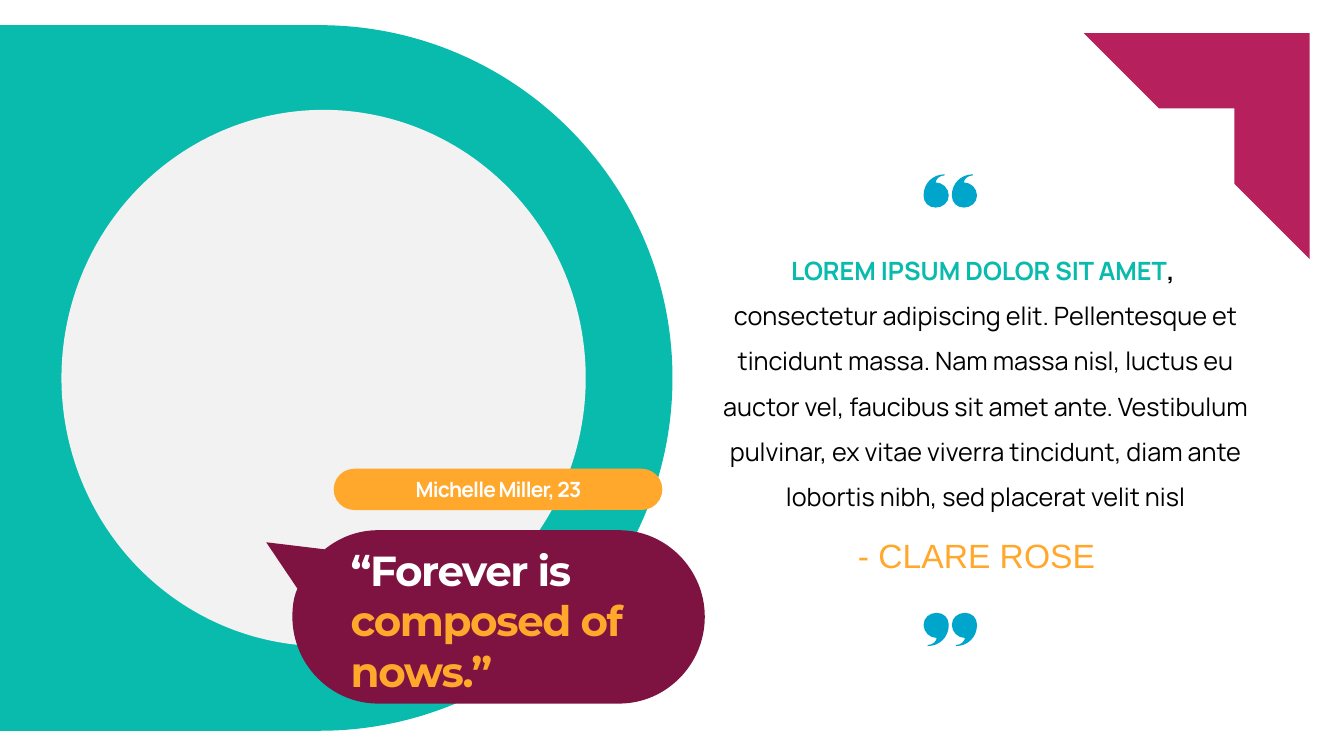
from dataclasses import dataclass

from lxml import etree
from pptx import Presentation
from pptx.dml.color import RGBColor
from pptx.enum.shapes import MSO_SHAPE
from pptx.enum.text import MSO_ANCHOR, MSO_AUTO_SIZE, PP_ALIGN
from pptx.oxml.ns import qn
from pptx.util import Inches, Pt

ROUND_RECT = MSO_SHAPE.ROUNDED_RECTANGLE
OVAL = MSO_SHAPE.OVAL
HALF_FRAME = MSO_SHAPE.HALF_FRAME
LEFT, CENTER = PP_ALIGN.LEFT, PP_ALIGN.CENTER
TOP, MIDDLE = MSO_ANCHOR.TOP, MSO_ANCHOR.MIDDLE
FIT_SHAPE = MSO_AUTO_SIZE.SHAPE_TO_FIT_TEXT


@dataclass(frozen=True)
class Theme:
    teal: str = "08BBAD"
    grey: str = "F2F2F2"
    blue: str = "00A5CC"
    berry: str = "B5205D"
    wine: str = "7E1341"
    orange: str = "FFA82C"
    white: str = "FFFFFF"
    black: str = "000000"
    body_font: str = "Manrope"
    quote_font: str = "Montserrat"
    author_font: str = "Arial"
    label_size: int = 15
    body_size: int = 18
    author_size: int = 24
    quote_size: int = 30


THEME = Theme()

# Outlines in inches: a pair is a corner, six numbers are a cubic curve
PANEL = [
    (3.17, 0.25), (0, 0.25), (0, 7.25), (3.17, 7.25),
    (5.1, 7.25, 6.67, 5.68, 6.67, 3.75), (6.67, 1.82, 5.1, 0.25, 3.17, 0.25),
]
BUBBLE = [
    (6.14, 5.26), (3.75, 5.26), (3.55, 5.26, 3.37, 5.33, 3.22, 5.45),
    (2.64, 5.38), (2.95, 5.84), (2.91, 5.93, 2.9, 6.02, 2.9, 6.12),
    (2.9, 6.59, 3.28, 6.98, 3.75, 6.98), (6.14, 6.98),
    (6.61, 6.98, 6.99, 6.59, 6.99, 6.12), (6.99, 5.65, 6.61, 5.26, 6.14, 5.26),
]
QUOTE_SIZE = (0.25, 0.33)
QUOTE_MARK = [
    (0.12, 0.08), (0.12, 0.05, 0.16, 0.01, 0.21, 0.01), (0.21, 0),
    (0.09, 0, 0, 0.09, 0, 0.21), (0, 0.28, 0.05, 0.33, 0.12, 0.33),
    (0.19, 0.33, 0.25, 0.28, 0.25, 0.21), (0.25, 0.14, 0.19, 0.08, 0.12, 0.08),
]


def paint(sp, color):
    sp.shadow.inherit = False
    sp.fill.solid()
    sp.fill.fore_color.rgb = RGBColor.from_string(color)
    sp.line.fill.background()


def add_preset(slide, kind, box, color, rotation=0, radius=None):
    sp = slide.shapes.add_shape(kind, *(Inches(n) for n in box))
    sp.rotation = rotation
    if radius is not None:
        sp.adjustments[0] = radius
    paint(sp, color)


def add_outline(slide, outline, color):
    points = [(Inches(part[i]), Inches(part[i + 1]))
              for part in outline for i in range(0, len(part), 2)]
    builder = slide.shapes.build_freeform(*points[0])
    builder.add_line_segments(points[1:], close=True)
    sp = builder.convert_to_shape()
    paint(sp, color)

    # Join the three points of each curve into one cubic segment
    segments = iter(sp._element.findall(".//" + qn("a:lnTo")))
    for part in outline[1:]:
        first = next(segments)
        if len(part) == 6:
            curve = etree.Element(qn("a:cubicBezTo"))
            first.addprevious(curve)
            for segment in (first, next(segments), next(segments)):
                curve.append(segment[0])
                segment.getparent().remove(segment)


def add_quote_mark(slide, left, top, closing=False):
    def place(i, n):
        axis = i % 2
        return (left, top)[axis] + (QUOTE_SIZE[axis] - n if closing else n)

    outline = [tuple(place(i, n) for i, n in enumerate(part)) for part in QUOTE_MARK]
    add_outline(slide, outline, THEME.blue)


def add_text(slide, box, paragraphs, font, size, align=CENTER, anchor=TOP,
             line_spacing=None, tracking=None):
    """Each paragraph is a list of (text, color, bold) runs."""
    tf = slide.shapes.add_textbox(*(Inches(n) for n in box)).text_frame
    tf.word_wrap = True
    tf.auto_size = FIT_SHAPE
    tf.vertical_anchor = anchor
    for i, runs in enumerate(paragraphs):
        p = tf.add_paragraph() if i else tf.paragraphs[0]
        p.alignment = align
        p.line_spacing = line_spacing
        for text, color, bold in runs:
            r = p.add_run()
            r.text = text
            r.font.name = font
            r.font.size = Pt(size)
            r.font.bold = bold
            r.font.color.rgb = RGBColor.from_string(color)
            if tracking:
                r._r.get_or_add_rPr().set("spc", str(tracking))


def main():
    prs = Presentation()
    prs.slide_width, prs.slide_height = Inches(13.33), Inches(7.5)
    slide = prs.slides.add_slide(prs.slide_layouts[6])

    # Teal panel and portrait circle
    add_outline(slide, PANEL, THEME.teal)
    add_preset(slide, OVAL, (0.61, 1.09, 5.2, 5.32), THEME.grey)

    # Testimonial
    add_text(slide, (7.04, 2.33, 5.47, 2.77), [
        [("LOREM IPSUM DOLOR SIT AMET", THEME.teal, True), (", ", THEME.black, True)],
        [("consectetur adipiscing elit. Pellentesque et tincidunt massa. "
          "Nam massa nisl, luctus eu auctor vel, faucibus sit amet ante. "
          "Vestibulum pulvinar, ex vitae viverra tincidunt, diam ante "
          "lobortis nibh, sed placerat velit nisl", THEME.black, False)],
    ], THEME.body_font, THEME.body_size, line_spacing=1.5)

    # Opening and closing quotation marks
    for top, closing in ((1.73, False), (6.08, True)):
        for left in (9.16, 9.44):
            add_quote_mark(slide, left, top, closing)

    # Corner ornament and author
    add_preset(slide, HALF_FRAME, (10.75, 0.33, 2.24, 2.24), THEME.berry, 90)
    add_text(slide, (8.32, 5.26, 2.73, 0.5), [[("- CLARE ROSE", THEME.orange, False)]],
             THEME.author_font, THEME.author_size)

    # Speech bubble, name label and quote
    add_outline(slide, BUBBLE, THEME.wine)
    add_preset(slide, ROUND_RECT, (3.31, 4.65, 3.26, 0.41), THEME.orange, radius=0.5)
    add_text(slide, (3.63, 4.68, 2.63, 0.35), [[("Michelle Miller, 23", THEME.white, True)]],
             THEME.body_font, THEME.label_size, anchor=MIDDLE, tracking=-60)
    add_text(slide, (3.38, 5.34, 3.89, 1.62), [
        [("“Forever is ", THEME.white, True), ("composed of nows.”", THEME.orange, True)],
    ], THEME.quote_font, THEME.quote_size, LEFT, MIDDLE, tracking=-100)

    prs.save("out.pptx")


if __name__ == "__main__":
    main()
